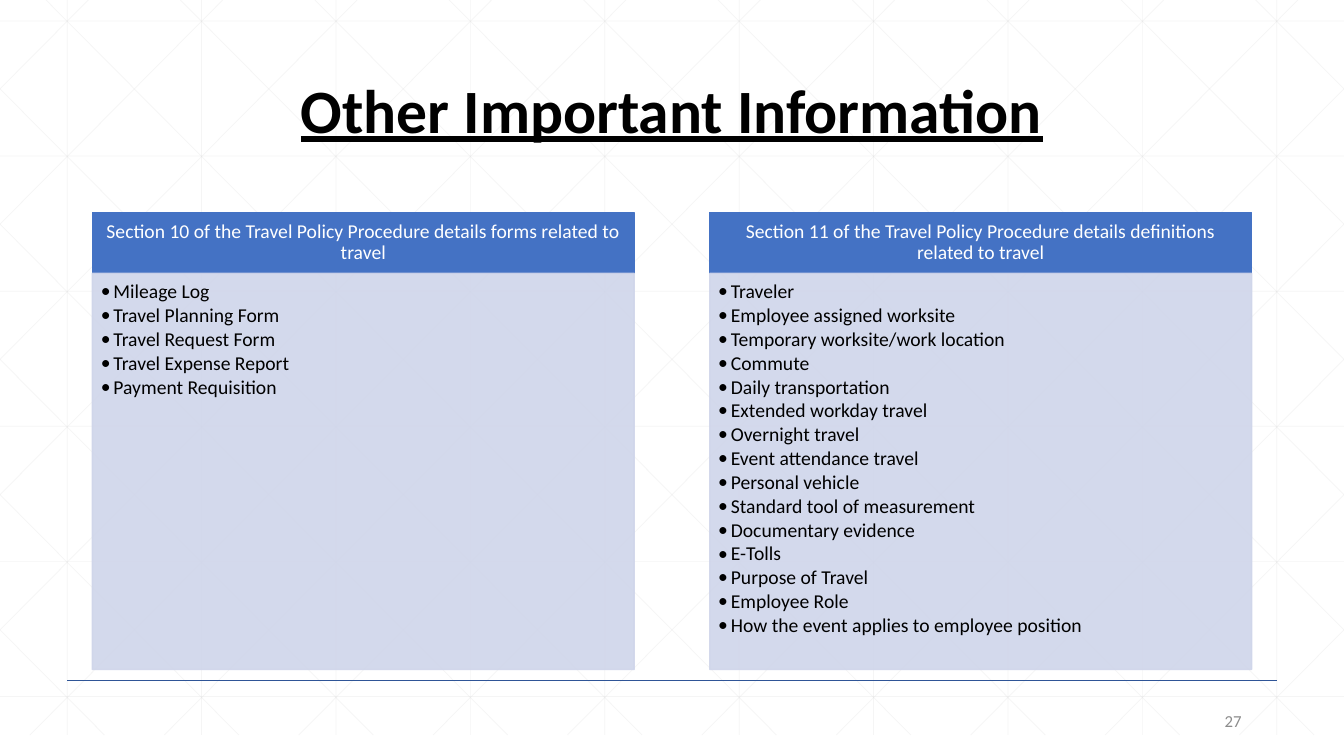
from lxml.etree import SubElement
from pptx import Presentation
from pptx.dml.color import RGBColor
from pptx.enum.shapes import MSO_CONNECTOR
from pptx.enum.text import MSO_ANCHOR, MSO_AUTO_SIZE, PP_ALIGN
from pptx.oxml.ns import qn
from pptx.util import Pt

WIDTH, HEIGHT = 960, 540
TOP, BOTTOM = -15, 525
STEP = 96
SLOPE = 540 / 536.6

FORMS = [
    "Mileage Log", "Travel Planning Form", "Travel Request Form",
    "Travel Expense Report", "Payment Requisition",
]
TERMS = [
    "Traveler", "Employee assigned worksite",
    "Temporary worksite/work location", "Commute", "Daily transportation",
    "Extended workday travel", "Overnight travel",
    "Event attendance travel", "Personal vehicle",
    "Standard tool of measurement", "Documentary evidence", "E-Tolls",
    "Purpose of Travel", "Employee Role",
    "How the event applies to employee position",
]


def paint(color, value, alpha=100):
    color.rgb = RGBColor.from_string(value)
    if alpha < 100:
        node = color._xFill.find(qn("a:srgbClr"))
        SubElement(node, qn("a:alpha")).set("val", str(alpha * 1000))


def rule(slide, start, end, color, width, alpha=100):
    line = slide.shapes.add_connector(
        MSO_CONNECTOR.STRAIGHT, *[Pt(value) for value in (*start, *end)])
    line.line.width = Pt(width)
    line.line.fill.solid()
    paint(line.line.fill.fore_color, color, alpha)
    SubElement(line._element.spPr, qn("a:effectLst"))
    slide.shapes._spTree.insert(2, line._element)


def mesh(slide):
    faint = ("D9D9D9", 0.5, 25)
    for i in range(10):
        x = STEP / 2 + STEP * i
        rule(slide, (x, 0), (x, BOTTOM), *faint)
    for i in range(6):
        y = 15 + 96.5 * i
        rule(slide, (0, y), (WIDTH, y), *faint)
    for i in range(-5, 10):
        base = 18 + STEP * i
        left = max(0, base - TOP / SLOPE)
        right = min(WIDTH, base + (BOTTOM - TOP) / SLOPE)
        high, low = [TOP + (x - base) * SLOPE for x in (left, right)]
        rule(slide, (left, high), (right, low), *faint)
        rule(slide, (WIDTH - left, high), (WIDTH - right, low), *faint)


def place(shape, left, top, width, height):
    shape.left, shape.top = Pt(left), Pt(top)
    shape.width, shape.height = Pt(width), Pt(height)


def write(shape, text, size, color, align, anchor, inset=(7.2, 3.6, 7.2, 3.6),
          spacing=0.9, after=0, bold=False, under=False):
    frame = shape.text_frame
    frame.text = text
    frame.word_wrap = True
    frame.auto_size = MSO_AUTO_SIZE.NONE
    frame.vertical_anchor = anchor
    (frame.margin_left, frame.margin_top,
     frame.margin_right, frame.margin_bottom) = [Pt(side) for side in inset]
    for para in frame.paragraphs:
        para.alignment = align
        para.line_spacing = spacing
        para.space_before = Pt(0)
        para.space_after = Pt(after)
        for run in para.runs:
            run.font.name = "Calibri"
            run.font.size = Pt(size)
            run.font.bold = bold
            run.font.underline = under
            paint(run.font.color, color)


def panel(shape, box, color, alpha=100):
    place(shape, *box)
    shape.fill.solid()
    paint(shape.fill.fore_color, color, alpha)
    shape.line.width = Pt(1)
    shape.line.fill.solid()
    paint(shape.line.fill.fore_color, color, alpha)


def column(head, body, left, title, items):
    panel(head, (left, 151.8, 387, 43.4), "4472C4")
    write(head, title, 14, "FFFFFF", PP_ALIGN.CENTER, MSO_ANCHOR.MIDDLE,
          (8, 4.5, 8, 4.5))
    panel(body, (left, 195.2, 387, 283), "CFD5EA", 90)
    write(body, "\n".join(items), 14, "000000", PP_ALIGN.LEFT,
          MSO_ANCHOR.TOP, (6, 6, 8, 8.5), after=1.9)
    for para in body.text_frame.paragraphs:
        props = para._p.get_or_add_pPr()
        props.set("marL", str(Pt(9)))
        props.set("indent", str(Pt(-9)))
        SubElement(props, qn("a:buFont")).set("typeface", "Calibri")
        SubElement(props, qn("a:buChar")).set("char", "•")


def main():
    deck = Presentation()
    deck.slide_width, deck.slide_height = Pt(WIDTH), Pt(HEIGHT)
    slide = deck.slides.add_slide(deck.slide_layouts[4])
    title, *parts = slide.placeholders
    rule(slide, (48, 486), (912, 486), "2F5597", 1)
    mesh(slide)
    place(title, 66, 28.75, 828, 104.4)
    write(title, "Other Important Information", 44, "000000",
          PP_ALIGN.CENTER, MSO_ANCHOR.MIDDLE, bold=True, under=True)
    column(*parts[:2], 66,
           "Section 10 of the Travel Policy Procedure details forms "
           "related to travel", FORMS)
    column(*parts[2:], 507,
           "Section 11 of the Travel Policy Procedure details definitions "
           "related to travel", TERMS)
    number = slide.shapes.add_textbox(Pt(678), Pt(500.5), Pt(216), Pt(28.75))
    write(number, "27", 12, "8C8C8C", PP_ALIGN.RIGHT, MSO_ANCHOR.MIDDLE,
          spacing=1.0)
    deck.save("out.pptx")


if __name__ == "__main__":
    main()
